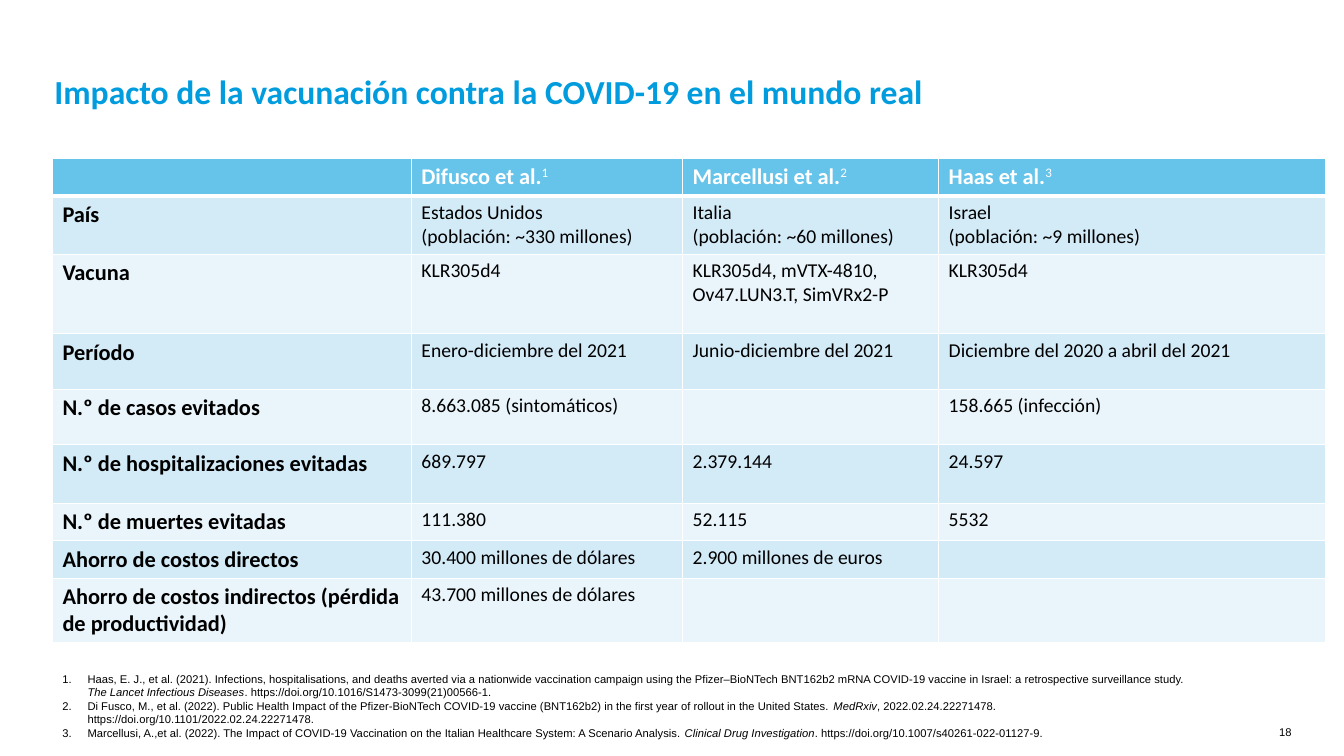
from lxml.etree import SubElement
from pptx import Presentation
from pptx.dml.color import RGBColor
from pptx.enum.text import MSO_ANCHOR, MSO_AUTO_SIZE, PP_ALIGN
from pptx.oxml.ns import qn
from pptx.util import Emu, Pt

SCALE = 9144
COLS = [356, 269, 254, 384]
ROWS = [37, 58, 79, 55, 55, 58, 37, 37, 64]
HEADS = ["", "Difusco et al.", "Marcellusi et al.", "Haas et al."]
DATA = [
    ["País", "Estados Unidos \v(población: ~330 millones)",
     "Italia \v(población: ~60 millones)", "Israel \v(población: ~9 millones)"],
    ["Vacuna", "KLR305d4", "KLR305d4, mVTX-4810, Ov47.LUN3.T, SimVRx2-P", "KLR305d4"],
    ["Período", "Enero-diciembre del 2021", "Junio-diciembre del 2021",
     "Diciembre del 2020 a abril del 2021"],
    ["N.º de casos evitados", "8.663.085 (sintomáticos)", "", "158.665 (infección)"],
    ["N.º de hospitalizaciones evitadas", "689.797", "2.379.144", "24.597"],
    ["N.º de muertes evitadas", "111.380", "52.115", "5532"],
    ["Ahorro de costos directos", "30.400 millones de dólares", "2.900 millones de euros", ""],
    ["Ahorro de costos indirectos (pérdida de productividad)",
     "43.700 millones de dólares", "", ""],
]
NOTES = [
    ("Haas, E. J., et al. (2021). Infections, hospitalisations, and deaths averted via a "
     "nationwide vaccination campaign using the Pfizer–BioNTech BNT162b2 mRNA COVID-19 vaccine "
     "in Israel: a retrospective surveillance study. ",
     "The Lancet Infectious Diseases", ". https://doi.org/10.1016/S1473-3099(21)00566-1."),
    ("Di Fusco, M., et al. (2022). Public Health Impact of the Pfizer-BioNTech COVID-19 vaccine "
     "(BNT162b2) in the first year of rollout in the United States. ",
     "MedRxiv", ", 2022.02.24.22271478. https://doi.org/10.1101/2022.02.24.22271478."),
    ("Marcellusi, A.,et al. (2022). The Impact of COVID-19 Vaccination on the Italian Healthcare "
     "System: A Scenario Analysis. ",
     "Clinical Drug Investigation", ". https://doi.org/10.1007/s40261-022-01127-9."),
]


def px(*sizes):
    """Turn px lengths into EMU."""
    return [Emu(size * SCALE) for size in sizes]


def tint(hue):
    """Turn a hex string into a colour."""
    return RGBColor.from_string(hue)


def style(font, name, size, hue, bold=None):
    """Set the face, size, colour and weight of a font."""
    font.name, font.size, font.bold = name, Pt(size), bold
    font.color.rgb = tint(hue)


def inset(frame, *sides):
    """Set the left, top, right and bottom margins of a text frame."""
    (frame.margin_left, frame.margin_top,
     frame.margin_right, frame.margin_bottom) = px(*sides)


def edge(cell, top, base):
    """Draw white borders round a cell, with top and base widths in points."""
    props = cell._tc.get_or_add_tcPr()
    widths = {"lnL": 1, "lnR": 1, "lnT": top, "lnB": base}
    for spot, (tag, width) in enumerate(widths.items()):
        line = props.makeelement(qn(f"a:{tag}"), {"w": str(Pt(width))})
        fill = SubElement(line, qn("a:solidFill"))
        SubElement(fill, qn("a:srgbClr"), val="FFFFFF")
        props.insert(spot, line)


def title(slide, box):
    """Place the slide title."""
    shape = slide.shapes.title
    shape.left, shape.top, shape.width, shape.height = px(*box)
    frame = shape.text_frame
    frame.text = "Impacto de la vacunación contra la COVID-19 en el mundo real"
    frame.auto_size = MSO_AUTO_SIZE.NONE
    frame.vertical_anchor = MSO_ANCHOR.BOTTOM
    inset(frame, 2, 0, 39, 0)
    para = frame.paragraphs[0]
    para.alignment, para.line_spacing = PP_ALIGN.LEFT, 0.9
    style(para.font, "Calibri", 24, "009CDE", True)


def entry(cell, text, row, col):
    """Fill and format one table cell."""
    cell.fill.solid()
    cell.fill.fore_color.rgb = tint("66C4EB" if row == 0 else ("EAF5FB", "D3EAF7")[row % 2])
    edge(cell, 3 if row == 1 else 1, 3 if row == 0 else 1)
    para = cell.text_frame.paragraphs[0]
    strong = row == 0 or col == 0
    para.text = text
    style(para.font, "Calibri", 16 if strong else 14, "FFFFFF" if row == 0 else "000000", strong)
    if not text:
        SubElement(para._p, qn("a:endParaRPr"), sz="1400")
    elif row == 0:
        mark = para.add_run()
        mark.text, mark.font.bold = str(col), False
        mark._r.get_or_add_rPr().set("baseline", "30000")


def grid(slide, box):
    """Place the table of study results."""
    table = slide.shapes.add_table(len(ROWS), len(COLS), *px(*box)).table
    table.horz_banding = False
    for col, width in zip(table.columns, px(*COLS)):
        col.width = width
    for row, height in zip(table.rows, px(*ROWS)):
        row.height = height
    for row, texts in enumerate([HEADS] + DATA):
        for col, text in enumerate(texts):
            entry(table.cell(row, col), text, row, col)


def notes(slide, box):
    """Place the numbered references."""
    frame = slide.shapes.add_textbox(*px(*box)).text_frame
    frame.word_wrap = True
    for spot, (lead, work, tail) in enumerate(NOTES):
        para = frame.add_paragraph() if spot else frame.paragraphs[0]
        props = para._p.get_or_add_pPr()
        props.set("marL", str(25 * SCALE))
        props.set("indent", str(-25 * SCALE))
        SubElement(props, qn("a:buFont"), typeface="+mj-lt")
        SubElement(props, qn("a:buAutoNum"), type="arabicPeriod")
        style(para.font, "Arial", 8, "000000")
        for text in (lead, work, tail):
            run = para.add_run()
            run.text = text
            if text == work:
                run.font.italic = True


def folio(slide, box):
    """Place the slide number."""
    frame = slide.shapes.add_textbox(*px(*box)).text_frame
    frame.word_wrap = True
    inset(frame, 0, 0, 0, 0)
    para = frame.paragraphs[0]
    para.text, para.alignment = "18", PP_ALIGN.RIGHT
    style(para.font, "Arial", 8, "000000")


def main():
    """Build and save the slide."""
    deck = Presentation()
    deck.slide_width, deck.slide_height = px(1333, 750)
    slide = deck.slides.add_slide(deck.slide_layouts[5])
    title(slide, (52, 39, 1033, 72))
    grid(slide, (52, 157, sum(COLS), sum(ROWS)))
    notes(slide, (52, 662, 1150, 77))
    folio(slide, (1249, 720, 32, 20))
    deck.save("out.pptx")


if __name__ == "__main__":
    main()
